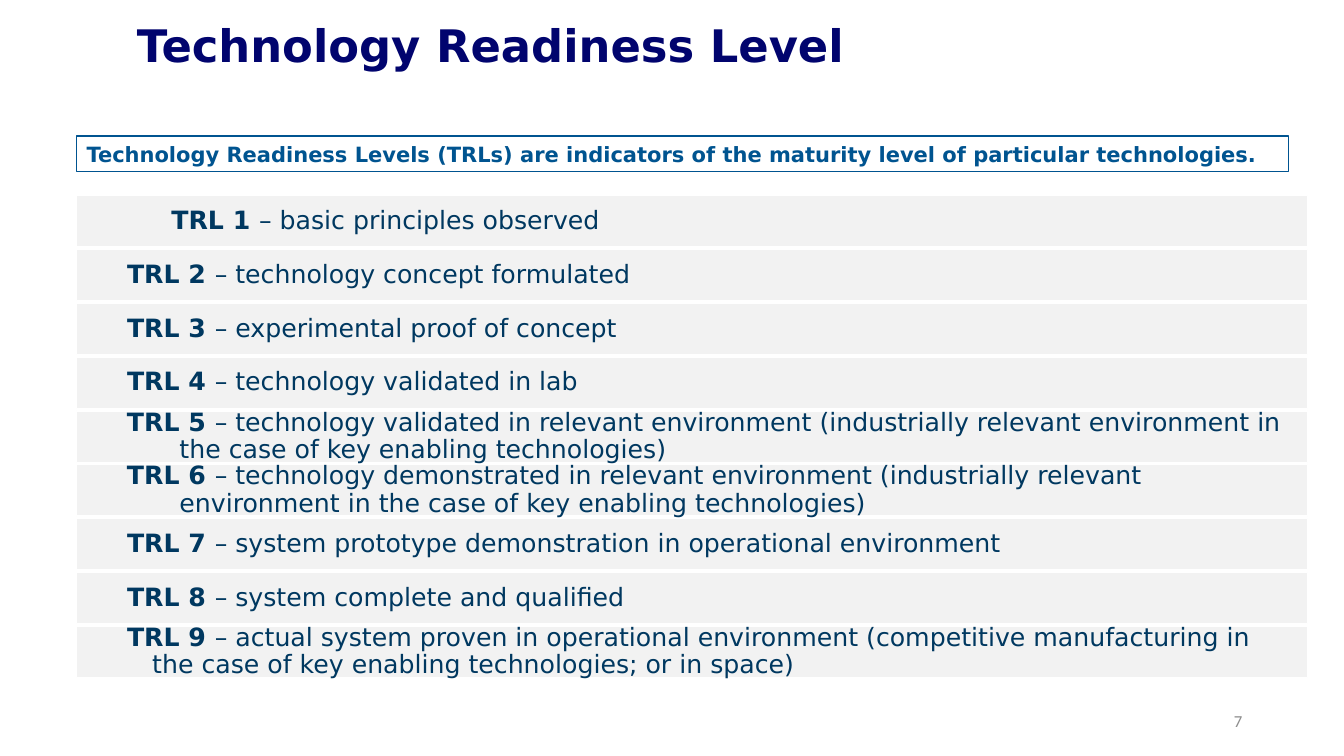
from dataclasses import dataclass

import pptx
import pptx.dml.color
import pptx.enum.shapes
import pptx.enum.text
import pptx.util

Anchor = pptx.enum.text.MSO_ANCHOR
Align = pptx.enum.text.PP_ALIGN

# Grid: 133.3 columns by 75 rows of equal cells
COLUMNS, ROWS = 133.3, 75
SLIDE_WIDTH = pptx.util.Inches(13.33)
SLIDE_HEIGHT = pptx.util.Inches(7.5)


@dataclass(frozen=True)
class Theme:
    title: str = "01046E"
    accent: str = "005490"
    level: str = "003860"
    band: str = "F2F2F2"
    paper: str = "FFFFFF"
    muted: str = "8C8C8C"
    font: str = "DejaVu Sans"
    number_font: str = "Calibri"
    title_size: int = 32
    level_size: int = 18
    definition_size: int = 15
    number_size: int = 12
    line_width: int = 1
    tight: float = 0.9


THEME = Theme()


@dataclass(frozen=True)
class Area:
    """Left, top, width and height in grid columns and rows."""
    left: float
    top: float
    width: float
    height: float


@dataclass(frozen=True)
class TextStyle:
    size: int
    color: str
    bold: bool = False
    font: str = THEME.font


@dataclass(frozen=True)
class Level:
    """One readiness level, with its first and following line indents in columns."""
    description: str
    first: float = 4.4
    following: float = 4.4


LEVELS = [
    Level("basic principles observed", 8.8, 8.8),
    Level("technology concept formulated"),
    Level("experimental proof of concept"),
    Level("technology validated in lab"),
    Level("technology validated in relevant environment (industrially relevant "
          "environment in the case of key enabling technologies)", following=9.6),
    Level("technology demonstrated in relevant environment (industrially relevant "
          "environment in the case of key enabling technologies)", following=9.6),
    Level("system prototype demonstration in operational environment"),
    Level("system complete and qualified"),
    Level("actual system proven in operational environment (competitive manufacturing in "
          "the case of key enabling technologies; or in space)", following=6.9),
]
FIRST_LEVEL = Area(7.6, 19.4, 122.1, 5.1)
LEVEL_PITCH = 5.34


def across(columns: float) -> int:
    return round(SLIDE_WIDTH * columns / COLUMNS)


def down(rows: float) -> int:
    return round(SLIDE_HEIGHT * rows / ROWS)


def place(area: Area) -> tuple[int, int, int, int]:
    return across(area.left), down(area.top), across(area.width), down(area.height)


def rgb(value: str) -> pptx.dml.color.RGBColor:
    return pptx.dml.color.RGBColor.from_string(value)


def add_run(paragraph, text: str, style: TextStyle) -> None:
    run = paragraph.add_run()
    run.text = text
    run.font.name = style.font
    run.font.size = pptx.util.Pt(style.size)
    run.font.bold = style.bold
    run.font.color.rgb = rgb(style.color)


def add_label(shapes, area: Area, text: str, style: TextStyle,
              align=Align.LEFT, anchor=Anchor.TOP, spacing: float = 1.0) -> None:
    frame = shapes.add_textbox(*place(area)).text_frame
    frame.word_wrap = True
    frame.vertical_anchor = anchor
    paragraph = frame.paragraphs[0]
    paragraph.alignment = align
    paragraph.line_spacing = spacing
    add_run(paragraph, text, style)


def add_box(shapes, area: Area, line: str, fill: str | None = None):
    shape = shapes.add_shape(pptx.enum.shapes.MSO_SHAPE.RECTANGLE, *place(area))
    shape.shadow.inherit = False
    if fill is None:
        shape.fill.background()
    else:
        shape.fill.solid()
        shape.fill.fore_color.rgb = rgb(fill)
    shape.line.color.rgb = rgb(line)
    shape.line.width = pptx.util.Pt(THEME.line_width)
    shape.text_frame.word_wrap = True
    shape.text_frame.paragraphs[0].alignment = Align.LEFT
    return shape


def add_level(shapes, index: int, level: Level) -> None:
    top = FIRST_LEVEL.top + index * LEVEL_PITCH
    area = Area(FIRST_LEVEL.left, top, FIRST_LEVEL.width, FIRST_LEVEL.height)
    frame = add_box(shapes, area, THEME.paper, THEME.band).text_frame
    frame.vertical_anchor = Anchor.MIDDLE
    frame.margin_left, frame.margin_right = across(0.6), across(2)
    frame.margin_top = frame.margin_bottom = down(0.4)

    # Hanging indent for wrapped descriptions
    paragraph = frame.paragraphs[0]
    paragraph.line_spacing = THEME.tight
    properties = paragraph._p.get_or_add_pPr()
    properties.set("marL", str(across(level.following)))
    properties.set("indent", str(across(level.first - level.following)))

    add_run(paragraph, f"TRL {index + 1} ",
            TextStyle(THEME.level_size, THEME.level, bold=True))
    add_run(paragraph, f"– {level.description}",
            TextStyle(THEME.level_size, THEME.level))


def main() -> None:
    presentation = pptx.Presentation()
    presentation.slide_width = SLIDE_WIDTH
    presentation.slide_height = SLIDE_HEIGHT
    slide = presentation.slides.add_slide(presentation.slide_layouts[6])

    # Slide number and title
    add_label(slide.shapes, Area(94.2, 69.5, 30, 4), "7",
              TextStyle(THEME.number_size, THEME.muted, font=THEME.number_font),
              Align.RIGHT, Anchor.MIDDLE)
    add_label(slide.shapes, Area(12.6, 1.9, 93.4, 11.3), "Technology Readiness Level",
              TextStyle(THEME.title_size, THEME.title, bold=True), spacing=THEME.tight)

    # Readiness levels
    levels = slide.shapes.add_group_shape()
    for index, level in enumerate(LEVELS):
        add_level(levels.shapes, index, level)

    # Definition
    definition = add_box(slide.shapes, Area(7.6, 13.5, 120.2, 3.5), THEME.accent)
    frame = definition.text_frame
    frame.auto_size = pptx.enum.text.MSO_AUTO_SIZE.SHAPE_TO_FIT_TEXT
    frame.vertical_anchor = Anchor.TOP
    add_run(frame.paragraphs[0],
            "Technology Readiness Levels (TRLs) are indicators of the maturity level "
            "of particular technologies.",
            TextStyle(THEME.definition_size, THEME.accent, bold=True))

    presentation.save("out.pptx")


if __name__ == "__main__":
    main()
